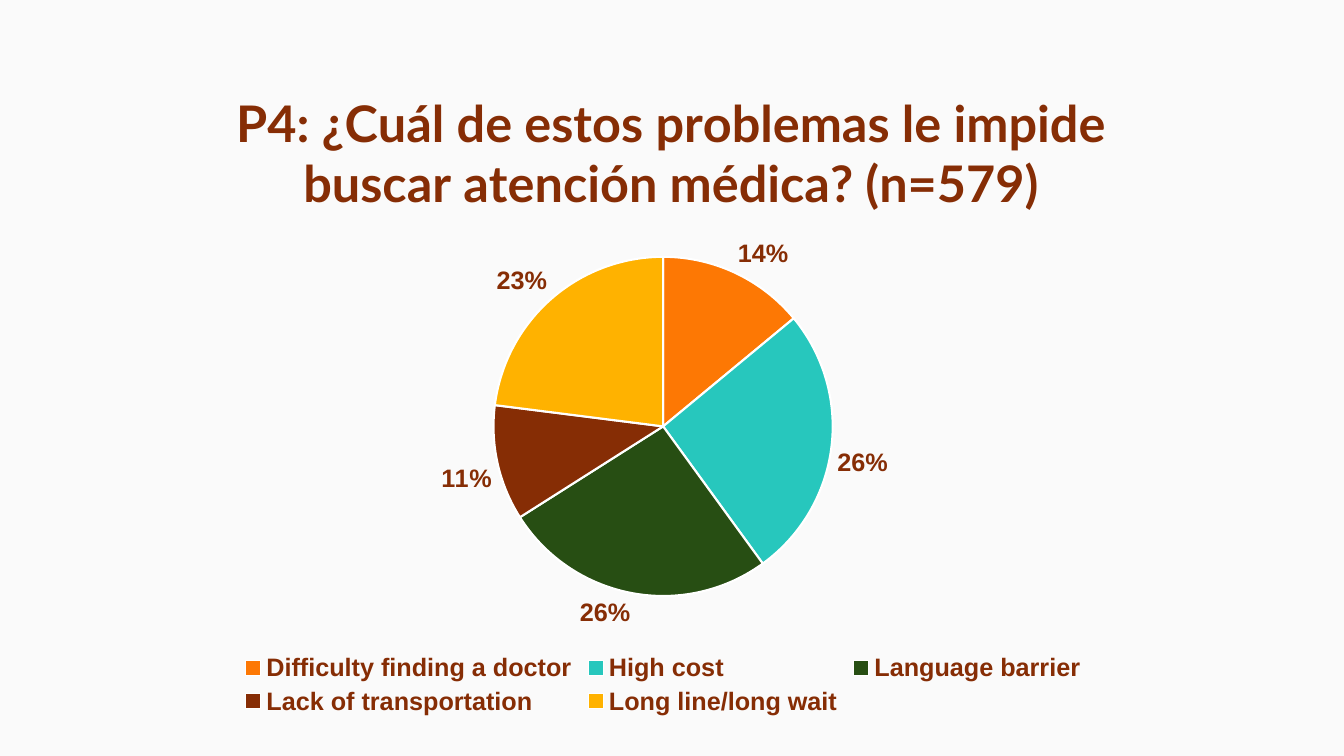
import dataclasses

import lxml.etree
import pptx
import pptx.chart.data
import pptx.dml.color
import pptx.enum.chart
import pptx.oxml.ns
import pptx.util

Pt = pptx.util.Pt
qn = pptx.oxml.ns.qn
BROWN = "862D05"


@dataclasses.dataclass
class Slice:
    name: str
    share: float
    fill: str


SLICES = [
    Slice("Difficulty finding a doctor", 0.14, "FD7804"),
    Slice("High cost", 0.26, "27C7BD"),
    Slice("Language barrier", 0.26, "274E13"),
    Slice("Lack of transportation", 0.11, BROWN),
    Slice("Long line/long wait", 0.23, "FFB200"),
]


def paint(target, color: str) -> None:
    target.solid()
    target.fore_color.rgb = pptx.dml.color.RGBColor.from_string(color)


def style(font, size: float, face: str = "Arial", bold: bool = True) -> None:
    font.size = Pt(size)
    font.name = face
    font.bold = bold
    paint(font.fill, BROWN)


def place(parent, index: int, **values) -> None:
    """Give a chart part a fixed layout in fractions of the chart."""
    for old in parent.findall(qn("c:layout")):
        parent.remove(old)
    layout = lxml.etree.Element(qn("c:layout"))
    manual = lxml.etree.SubElement(layout, qn("c:manualLayout"))
    for tag, value in values.items():
        lxml.etree.SubElement(manual, qn("c:" + tag)).set("val", str(value))
    parent.insert(index, layout)


def add_pie(slide):
    data = pptx.chart.data.CategoryChartData(number_format="0%")
    data.categories = [part.name for part in SLICES]
    data.add_series("Series 1", [part.share for part in SLICES])
    frame = slide.shapes.add_chart(
        pptx.enum.chart.XL_CHART_TYPE.PIE,
        Pt(41), Pt(31.7), Pt(865.4), Pt(483.1), data)
    chart = frame.chart
    style(chart.font, 10, bold=False)

    # Slices
    plot = chart.plots[0]
    plot.vary_by_categories = True
    for index, part in enumerate(SLICES):
        shape = plot.series[0].points[index].format
        paint(shape.fill, part.fill)
        paint(shape.line.fill, "FFFFFF")
        shape.line.width = Pt(1.5)

    # Labels
    plot.has_data_labels = True
    labels = plot.data_labels
    labels.show_value = True
    labels.show_percentage = False
    labels.number_format = "0%"
    labels.number_format_is_linked = False
    labels.position = pptx.enum.chart.XL_LABEL_POSITION.OUTSIDE_END
    style(labels.font, 18)

    # Legend
    chart.has_legend = True
    chart.legend.position = pptx.enum.chart.XL_LEGEND_POSITION.BOTTOM
    chart.legend.include_in_layout = False
    style(chart.legend.font, 18)
    return chart


def add_title(chart, text: str) -> None:
    chart.has_title = True
    run = chart.chart_title.text_frame.paragraphs[0].add_run()
    run.text = text
    style(run.font, 36, "Lato")


def main() -> None:
    deck = pptx.Presentation()
    deck.slide_width, deck.slide_height = Pt(960), Pt(540)
    slide = deck.slides.add_slide(deck.slide_layouts[6])
    paint(slide.background.fill, "FAFAFA")

    chart = add_pie(slide)
    add_title(chart, "P4: ¿Cuál de estos problemas le impide "
                     "buscar atención médica? (n=579)")

    # Fixed places for title and pie
    root = chart.element
    place(root.find(".//" + qn("c:title")), 1,
          xMode="edge", yMode="edge", x=0.14, y=0.05)
    place(root.find(".//" + qn("c:plotArea")), 0,
          layoutTarget="inner", xMode="edge", yMode="edge",
          x=0.36, y=0.31, w=0.28, h=0.51)
    deck.save("out.pptx")


if __name__ == "__main__":
    main()
